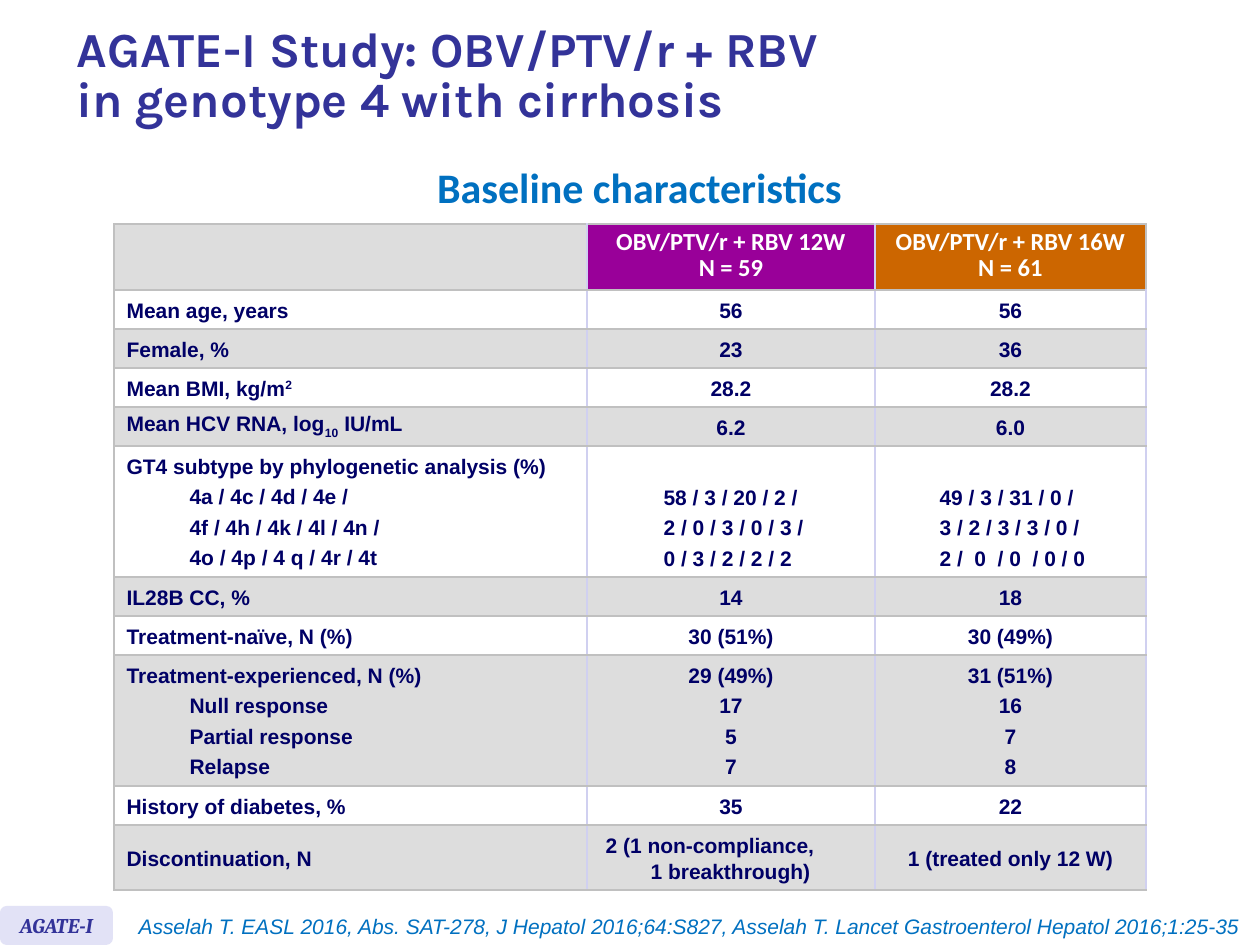
from lxml.etree import SubElement
from pptx import Presentation
from pptx.dml.color import RGBColor
from pptx.enum.shapes import MSO_SHAPE
from pptx.enum.text import MSO_ANCHOR, MSO_AUTO_SIZE, PP_ALIGN
from pptx.oxml.ns import qn
from pptx.util import Emu, Pt

PX = 914400 / 126

INDIGO = RGBColor(0x33, 0x33, 0x99)
BLUE = RGBColor(0x00, 0x70, 0xC0)
NAVY = RGBColor(0x00, 0x00, 0x66)
LAVENDER = RGBColor(0xE2, 0xE2, 0xF6)
PURPLE = RGBColor(0x99, 0x00, 0x99)
ORANGE = RGBColor(0xCC, 0x66, 0x00)
WHITE = RGBColor(0xFF, 0xFF, 0xFF)
GREY = RGBColor(0xDD, 0xDD, 0xDD)
GREY_BORDER = RGBColor(0xC0, 0xC0, 0xC0)
LILAC_BORDER = RGBColor(0xD0, 0xD0, 0xF0)

COLUMN_WIDTHS = (473, 288, 271)
ROW_HEIGHTS = (66, 39, 39, 39, 39, 131, 39, 39, 131, 39, 65)
HEADER_FILLS = (GREY, PURPLE, ORANGE)
SUBTYPE_ROW, DISCONTINUATION_ROW = 5, 10

# "\n" starts a paragraph, "\v" breaks a line, "|" encloses a raised or lowered part
BASELINE_SHIFTS = {"2": 30000, "10": -25000}
ROWS = (
    ("", "OBV/PTV/r + RBV 12W\vN = 59", "OBV/PTV/r + RBV 16W\vN = 61"),
    ("Mean age, years", "56", "56"),
    ("Female, %", "23", "36"),
    ("Mean BMI, kg/m|2", "28.2", "28.2"),
    ("Mean HCV RNA, log|10| IU/mL", "6.2", "6.0"),
    ("GT4 subtype by phylogenetic analysis (%)\n4a / 4c / 4d / 4e /\n"
     "4f / 4h / 4k / 4l / 4n /\n4o / 4p / 4 q / 4r / 4t",
     "58 / 3 / 20 / 2 /\n2 / 0 / 3 / 0 / 3 /\n0 / 3 / 2 / 2 / 2",
     "49 / 3 / 31 / 0 /\n3 / 2 / 3 / 3 / 0 /\n2 /  0  / 0  / 0 / 0"),
    ("IL28B CC, %", "14", "18"),
    ("Treatment-naïve, N (%)", "30 (51%)", "30 (49%)"),
    ("Treatment-experienced, N (%)\nNull response\nPartial response\nRelapse",
     "29 (49%)\n17\n5\n7", "31 (51%)\n16\n7\n8"),
    ("History of diabetes, %", "35", "22"),
    ("Discontinuation, N", "2 (1 non-compliance,\v1 breakthrough)",
     "1 (treated only 12 W)"),
)
# Left margin and first-line indent of the value cells that are not centred
VALUE_INDENTS = {
    (SUBTYPE_ROW, 1): (64, 0),
    (SUBTYPE_ROW, 2): (52, 0),
    (DISCONTINUATION_ROW, 1): (51, -45),
}


def px(length):
    return Emu(round(length * PX))


def format_runs(paragraph, name, size, color, bold=False, italic=False):
    for run in paragraph.runs:
        font = run.font
        font.name, font.size = name, Pt(size)
        font.bold, font.italic = bold, italic
        font.color.rgb = color


def set_indent(paragraph, margin, first_line=0):
    properties = paragraph._p.get_or_add_pPr()
    properties.set("marL", str(px(margin)))
    properties.set("indent", str(px(first_line)))


def add_title(slide):
    title = slide.shapes.title
    title.left, title.top, title.width, title.height = px(64), px(10), px(1150), px(135)
    frame = title.text_frame
    frame.text = "AGATE-I Study: OBV/PTV/r + RBV\vin genotype 4 with cirrhosis"
    frame.auto_size = MSO_AUTO_SIZE.NONE
    frame.vertical_anchor = MSO_ANCHOR.MIDDLE
    paragraph = frame.paragraphs[0]
    paragraph.alignment = PP_ALIGN.LEFT
    paragraph.line_spacing = 0.85
    format_runs(paragraph, "Karla", 28, INDIGO, bold=True)


def add_text_line(slide, box, text, alignment):
    """Add a one-paragraph text box and return the paragraph."""
    frame = slide.shapes.add_textbox(*map(px, box)).text_frame
    frame.word_wrap = True
    frame.text = text
    paragraph = frame.paragraphs[0]
    paragraph.alignment = alignment
    return paragraph


def add_study_tag(slide):
    tag = slide.shapes.add_shape(
        MSO_SHAPE.ROUNDED_RECTANGLE, px(0), px(906), px(113), px(39))
    tag.shadow.inherit = False
    tag.fill.solid()
    tag.fill.fore_color.rgb = LAVENDER
    tag.line.fill.background()
    frame = tag.text_frame
    frame.word_wrap = False
    frame.vertical_anchor = MSO_ANCHOR.MIDDLE
    frame.text = "AGATE-I"
    frame.paragraphs[0].alignment = PP_ALIGN.CENTER
    format_runs(frame.paragraphs[0], "Cambria", 12, INDIGO, bold=True, italic=True)


def set_borders(cell, left, right):
    properties = cell._tc.get_or_add_tcPr()
    colors = {"L": left, "R": right, "T": GREY_BORDER, "B": GREY_BORDER}
    for side, color in colors.items():
        line = SubElement(properties, qn(f"a:ln{side}"), w=str(Pt(1)))
        fill = SubElement(line, qn("a:solidFill"))
        SubElement(fill, qn("a:srgbClr"), val=str(color))


def set_paragraph_text(paragraph, text):
    """Write the text, shifting the parts enclosed in bars off the baseline."""
    plain, *parts = text.split("|")
    paragraph.text = plain
    for part in parts:
        run = paragraph.add_run()
        run.text = part
        if part in BASELINE_SHIFTS:
            run._r.get_or_add_rPr().set("baseline", str(BASELINE_SHIFTS[part]))


def fill_cell_text(cell, text, row, column):
    frame = cell.text_frame
    indent = VALUE_INDENTS.get((row, column))
    for index, line in enumerate(text.split("\n")):
        paragraph = frame.add_paragraph() if index else frame.paragraphs[0]
        set_paragraph_text(paragraph, line)
        paragraph.line_spacing = Pt(15)
        if index:
            paragraph.space_before = Pt(2.4)
        centred = column > 0 and indent is None
        paragraph.alignment = PP_ALIGN.CENTER if centred else PP_ALIGN.LEFT
        if indent:
            set_indent(paragraph, *indent)
        elif column == 0 and index:
            set_indent(paragraph, 63)
        if row == 0:
            format_runs(paragraph, "Calibri", 14, WHITE, bold=True)
        else:
            format_runs(paragraph, "Arial", 12, NAVY, bold=True)


def add_baseline_table(slide):
    table = slide.shapes.add_table(
        len(ROWS), len(COLUMN_WIDTHS), px(114), px(224),
        px(sum(COLUMN_WIDTHS)), px(sum(ROW_HEIGHTS))).table
    table.first_row = table.horz_banding = False
    for column, width in zip(table.columns, COLUMN_WIDTHS):
        column.width = px(width)
    for row, (height, texts) in enumerate(zip(ROW_HEIGHTS, ROWS)):
        table.rows[row].height = px(height)
        for column, text in enumerate(texts):
            cell = table.cell(row, column)
            set_borders(cell,
                        left=LILAC_BORDER if column else GREY_BORDER,
                        right=GREY_BORDER if (row, column) == (0, 2) else LILAC_BORDER)
            cell.fill.solid()
            band = WHITE if row % 2 else GREY
            cell.fill.fore_color.rgb = band if row else HEADER_FILLS[column]
            bottom = row == SUBTYPE_ROW and column > 0
            cell.vertical_anchor = MSO_ANCHOR.BOTTOM if bottom else MSO_ANCHOR.MIDDLE
            if text:
                fill_cell_text(cell, text, row, column)


def main():
    presentation = Presentation()
    presentation.slide_width, presentation.slide_height = px(1260), px(945)
    slide = presentation.slides.add_slide(presentation.slide_layouts[5])
    add_baseline_table(slide)
    heading = add_text_line(
        slide, (44, 179, 1191, 44), "Baseline characteristics", PP_ALIGN.CENTER)
    heading.line_spacing = Pt(15.2)
    format_runs(heading, "Calibri", 24, BLUE, bold=True)
    add_study_tag(slide)
    add_title(slide)
    citation = add_text_line(
        slide, (105, 907, 1148, 38),
        "Asselah T. EASL 2016, Abs. SAT-278, J Hepatol 2016;64:S827, "
        "Asselah T. Lancet Gastroenterol Hepatol 2016;1:25-35", PP_ALIGN.RIGHT)
    format_runs(citation, "Arial", 12, BLUE, italic=True)
    presentation.save("out.pptx")


if __name__ == "__main__":
    main()
